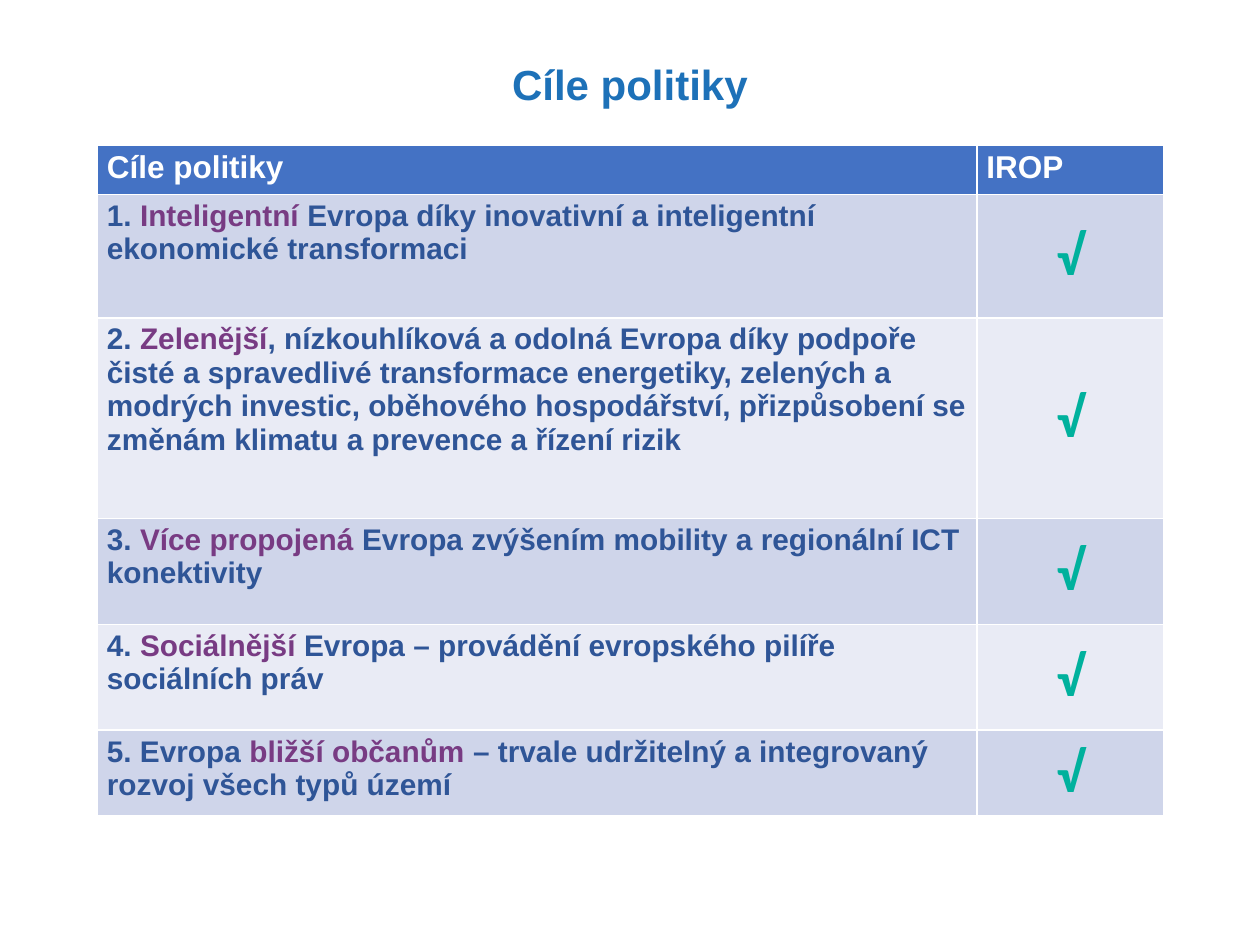
from pptx import Presentation
from pptx.dml.color import RGBColor
from pptx.enum.text import MSO_ANCHOR, PP_ALIGN
from pptx.util import Pt

MIDDLE, TOP = MSO_ANCHOR.MIDDLE, MSO_ANCHOR.TOP
CENTER, LEFT = PP_ALIGN.CENTER, PP_ALIGN.LEFT

WHITE = RGBColor(0xFF, 0xFF, 0xFF)
SKY = RGBColor(0x1D, 0x71, 0xB8)
BLUE = RGBColor(0x44, 0x72, 0xC4)
NAVY = RGBColor(0x2F, 0x55, 0x97)
PURPLE = RGBColor(0x78, 0x3B, 0x83)
TEAL = RGBColor(0x00, 0xB1, 0x9D)
BANDS = RGBColor(0xCF, 0xD5, 0xEA), RGBColor(0xE9, 0xEB, 0xF5)

TITLE = {"name": "Arial", "size": Pt(24), "bold": True}
HEAD = {"name": "Arial", "size": Pt(18), "bold": True}
BODY = {"name": "Arial", "size": Pt(17), "bold": True}
TICK = {"name": "Calibri", "size": Pt(32), "bold": True}
MARGINS = {
    "margin_left": Pt(5.4), "margin_right": Pt(5.4),
    "margin_top": Pt(2.7), "margin_bottom": Pt(2.7),
}

COLS = [502.6, 106.6]
ROWS = [28.1, 70.6, 114.5, 60.5, 60.5, 48.9]
HEADS = ["Cíle politiky", "IROP"]
GOALS = [
    ("1. ", "Inteligentní",
     " Evropa díky inovativní a inteligentní ekonomické transformaci"),
    ("2. ", "Zelenější",
     ", nízkouhlíková a odolná Evropa díky podpoře čisté a spravedlivé "
     "transformace energetiky, zelených a modrých investic, oběhového "
     "hospodářství, přizpůsobení se změnám klimatu a prevence a řízení rizik"),
    ("3. ", "Více propojená ",
     "Evropa zvýšením mobility a regionální ICT konektivity"),
    ("4. ", "Sociálnější",
     " Evropa – provádění evropského pilíře sociálních práv"),
    ("5. Evropa ", "bližší občanům ",
     "– trvale udržitelný a integrovaný rozvoj všech typů území"),
]


def apply(target, values):
    for key, value in values.items():
        setattr(target, key, value)


def write(para, parts, style, align):
    para.alignment = align
    for text, color in parts:
        run = para.add_run()
        run.text = text
        apply(run.font, style)
        run.font.color.rgb = color


def fill_cell(cell, parts, style, fill, align=LEFT, anchor=TOP):
    apply(cell, MARGINS)
    cell.vertical_anchor = anchor
    cell.fill.solid()
    cell.fill.fore_color.rgb = fill
    write(cell.text_frame.paragraphs[0], parts, style, align)


def add_title(slide, box):
    title = slide.shapes.title
    apply(title, dict(zip(("left", "top", "width", "height"), box)))
    frame = title.text_frame
    frame.word_wrap = True
    frame.vertical_anchor = MIDDLE
    para = frame.paragraphs[0]
    para.line_spacing = 0.9
    write(para, [("Cíle politiky", SKY)], TITLE, CENTER)


def add_goals(slide, box):
    table = slide.shapes.add_table(len(ROWS), len(COLS), *box).table
    for col, width in zip(table.columns, COLS):
        col.width = Pt(width)
    for row, height in zip(table.rows, ROWS):
        row.height = Pt(height)
    for i, text in enumerate(HEADS):
        fill_cell(table.cell(0, i), [(text, WHITE)], HEAD, BLUE)
    for i, goal in enumerate(GOALS):
        band = BANDS[i % 2]
        parts = zip(goal, (NAVY, PURPLE, NAVY))
        fill_cell(table.cell(i + 1, 0), parts, BODY, band)
        fill_cell(table.cell(i + 1, 1), [("√", TEAL)], TICK, band, CENTER, MIDDLE)


def main():
    deck = Presentation()
    deck.slide_width, deck.slide_height = Pt(720), Pt(540)
    slide = deck.slides.add_slide(deck.slide_layouts[5])
    add_title(slide, (Pt(49.7), Pt(27.4), Pt(620.6), Pt(43.9)))
    add_goals(slide, (Pt(55.7), Pt(83.1), Pt(sum(COLS)), Pt(sum(ROWS))))
    deck.save("out.pptx")


if __name__ == "__main__":
    main()
